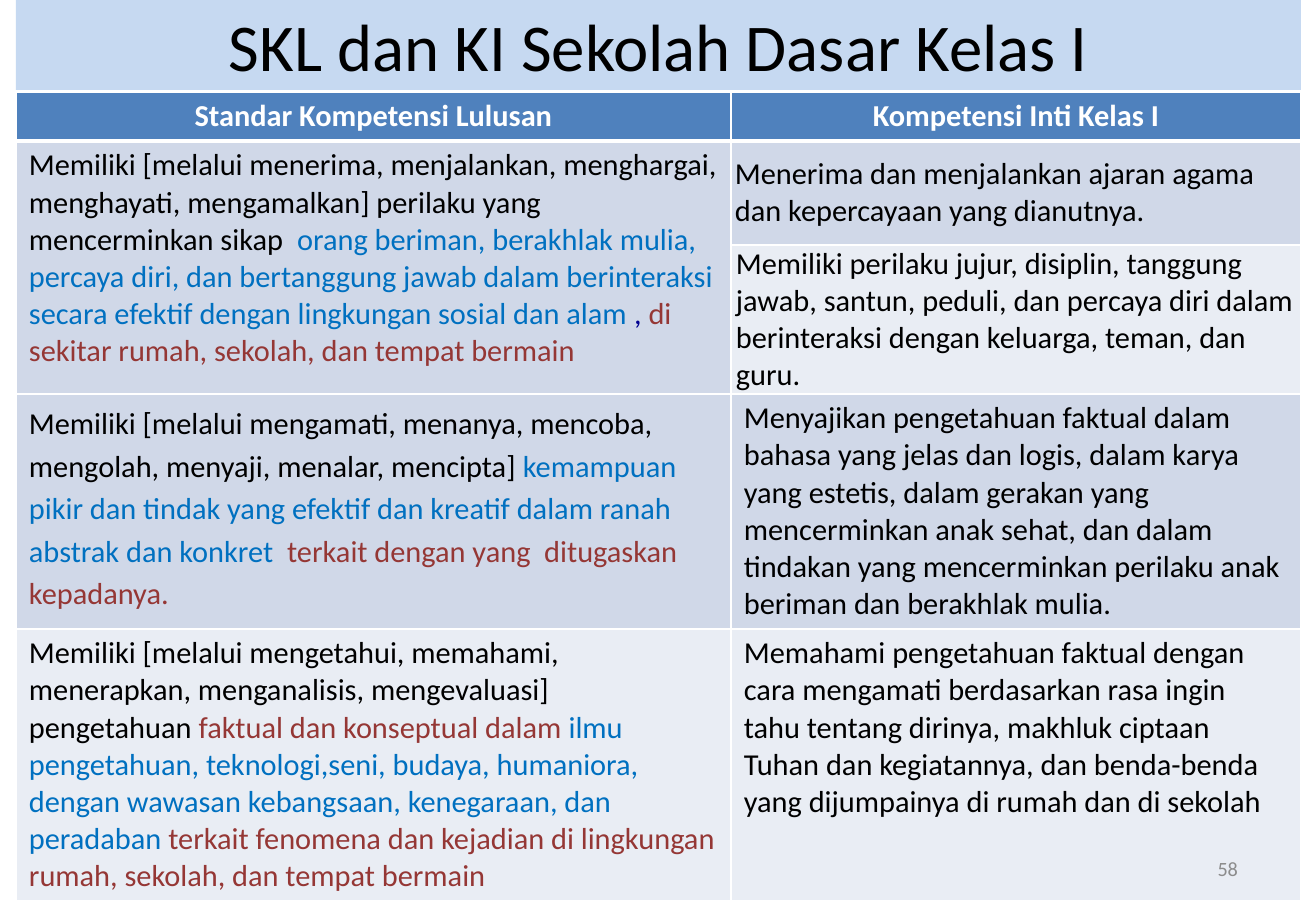
import pptx
import pptx.util
import pptx.dml.color
import pptx.enum.shapes
import pptx.enum.text
import pptx.oxml
import pptx.oxml.ns

PX = 7526  # EMU in one px
FONT = "Calibri"
HUES = {
    "white": "FFFFFF", "black": "000000", "sky": "C6D9F1", "head": "4F81BD",
    "dark": "D0D8E8", "light": "E9EDF4", "blue": "0070C0", "navy": "000090",
    "red": "953735", "gray": "8C8C8C",
}
ALIGN = pptx.enum.text.PP_ALIGN
MIDDLE = pptx.enum.text.MSO_ANCHOR.MIDDLE
TOP = pptx.enum.text.MSO_ANCHOR.TOP

COLS = [715, 570]
ROWS = [48, 104, 149, 235, 271]
PAD = (13, 6)

# Each cell: row, column, fill, runs, and options
CELLS = [
    (0, 0, "head", [("Standar Kompetensi Lulusan", "white")],
     {"bold": True, "align": ALIGN.CENTER}),
    (0, 1, "head", [("Kompetensi Inti Kelas I", "white")],
     {"bold": True, "align": ALIGN.CENTER}),
    (1, 0, "dark", [
        ("Memiliki [melalui menerima, menjalankan, menghargai, menghayati, "
         "mengamalkan] perilaku yang mencerminkan sikap  ", "black"),
        ("orang beriman, berakhlak mulia, percaya diri, dan bertanggung jawab "
         "dalam berinteraksi secara efektif dengan lingkungan sosial dan alam ", "blue"),
        (", ", "navy"),
        ("di sekitar rumah, sekolah, dan tempat bermain", "red")], {}),
    (1, 1, "dark", [
        ("Menerima dan menjalankan ajaran agama dan kepercayaan yang dianutnya.",
         "black")], {"pad": (4, 0), "anchor": MIDDLE, "gap": 6}),
    (2, 1, "light", [
        ("Memiliki perilaku jujur, disiplin, tanggung jawab, santun, peduli, dan "
         "percaya diri dalam berinteraksi dengan keluarga, teman, dan guru.",
         "black")], {"pad": (5, 0), "anchor": MIDDLE, "gap": 6}),
    (3, 0, "dark", [
        ("Memiliki [melalui mengamati, menanya, mencoba, mengolah, menyaji, "
         "menalar, mencipta] ", "black"),
        ("kemampuan pikir dan tindak yang efektif dan kreatif dalam ranah "
         "abstrak dan konkret  ", "blue"),
        ("terkait dengan yang  ditugaskan kepadanya.", "red")], {"lead": 1.15}),
    (3, 1, "dark", [
        ("Menyajikan pengetahuan faktual dalam bahasa yang jelas dan logis, dalam "
         "karya yang estetis, dalam gerakan yang mencerminkan anak sehat, dan dalam "
         "tindakan yang mencerminkan perilaku anak beriman dan berakhlak mulia.",
         "black")], {}),
    (4, 0, "light", [
        ("Memiliki [melalui mengetahui, memahami, menerapkan, menganalisis, "
         "mengevaluasi] pengetahuan ", "black"),
        ("faktual dan konseptual dalam ", "red"),
        ("ilmu pengetahuan, teknologi,seni, budaya, humaniora, dengan wawasan "
         "kebangsaan, kenegaraan, dan peradaban ", "blue"),
        ("terkait fenomena dan kejadian di lingkungan rumah, sekolah, dan tempat "
         "bermain", "red")], {}),
    (4, 1, "light", [
        ("Memahami pengetahuan faktual dengan cara mengamati berdasarkan rasa ingin "
         "tahu tentang dirinya, makhluk ciptaan Tuhan dan kegiatannya, dan "
         "benda-benda yang dijumpainya di rumah dan di sekolah", "black")], {}),
]


def px(num):
    return pptx.util.Emu(num * PX)


def paint(fill, hue):
    fill.solid()
    fill.fore_color.rgb = pptx.dml.color.RGBColor.from_string(HUES[hue])


def write(frame, runs, size, align=ALIGN.LEFT, bold=False):
    frame.word_wrap = True
    para = frame.paragraphs[0]
    para.alignment = align
    for text, hue in runs:
        run = para.add_run()
        run.text = text
        run.font.name = FONT
        run.font.size = pptx.util.Pt(size)
        run.font.bold = bold
        paint(run.font.fill, hue)
    return para


def edge(cell, row):
    """White cell borders, thick between the header and the body."""
    props = cell._tc.get_or_add_tcPr()
    wide = {0: "lnB", 1: "lnT"}.get(row)
    for spot, tag in enumerate(("lnL", "lnR", "lnT", "lnB")):
        width = pptx.util.Pt(3 if tag == wide else 1)
        line = pptx.oxml.parse_xml(
            f'<a:{tag} {pptx.oxml.ns.nsdecls("a")} w="{width}"><a:solidFill>'
            f'<a:srgbClr val="{HUES["white"]}"/></a:solidFill></a:{tag}>')
        props.insert(spot, line)


def title(slide, x, y, w, h):
    kind = pptx.enum.shapes.MSO_SHAPE.RECTANGLE
    bar = slide.shapes.add_shape(kind, px(x), px(y), px(w), px(h))
    bar.shadow.inherit = False
    paint(bar.fill, "sky")
    bar.line.fill.background()
    bar.text_frame.vertical_anchor = MIDDLE
    write(bar.text_frame, [("SKL dan KI Sekolah Dasar Kelas I", "black")],
          39.6, ALIGN.CENTER)


def grid(slide, x, y):
    table = slide.shapes.add_table(len(ROWS), len(COLS), px(x), px(y),
                                   px(sum(COLS)), px(sum(ROWS))).table
    table.first_row = table.horz_banding = False
    for col, width in zip(table.columns, COLS):
        col.width = px(width)
    for row, high in zip(table.rows, ROWS):
        row.height = px(high)
    table.cell(1, 0).merge(table.cell(2, 0))

    # Text and fill
    for row, col, hue, runs, opts in CELLS:
        cell = table.cell(row, col)
        paint(cell.fill, hue)
        side, rim = opts.get("pad", PAD)
        cell.margin_left = cell.margin_right = px(side)
        cell.margin_top = cell.margin_bottom = px(rim)
        cell.vertical_anchor = opts.get("anchor", TOP)
        para = write(cell.text_frame, runs, 18,
                     opts.get("align", ALIGN.LEFT), opts.get("bold", False))
        para.line_spacing = opts.get("lead")
        if "gap" in opts:
            para.space_before = para.space_after = pptx.util.Pt(opts["gap"])

    # Borders
    for row in range(len(ROWS)):
        for col in range(len(COLS)):
            edge(table.cell(row, col), row)


def number(slide, x, y, w, h):
    box = slide.shapes.add_textbox(px(x), px(y), px(w), px(h))
    box.text_frame.vertical_anchor = MIDDLE
    write(box.text_frame, [("58", "gray")], 12, ALIGN.RIGHT)


def main():
    deck = pptx.Presentation()
    deck.slide_width, deck.slide_height = px(1316), px(911)
    slide = deck.slides.add_slide(deck.slide_layouts[6])
    title(slide, 16, 0, sum(COLS), 90)
    grid(slide, 16, 92)
    number(slide, 943, 844, 307, 49)
    deck.save("out.pptx")


if __name__ == "__main__":
    main()
